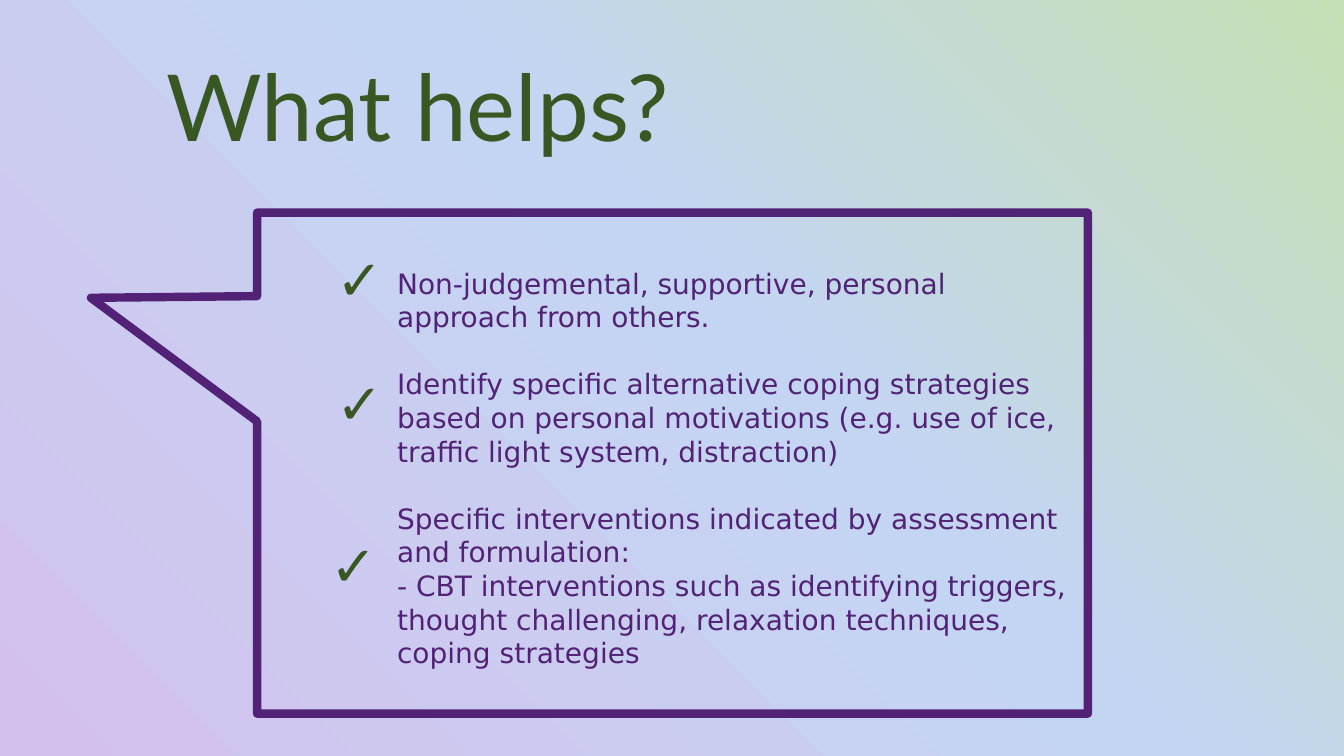
from lxml.etree import SubElement
from pptx import Presentation
from pptx.dml.color import RGBColor
from pptx.enum.shapes import MSO_SHAPE
from pptx.enum.text import MSO_ANCHOR, PP_ALIGN
from pptx.oxml import parse_xml
from pptx.oxml.ns import nsdecls, qn
from pptx.util import Inches, Pt

COLORS = {"lilac": "D3C1ED", "sky": "C4D5F3", "lime": "C5E0B4",
          "purple": "512275", "green": "385723"}
STOPS = [(0, "lilac"), (56, "sky"), (100, "lime")]
TITLE = {"size": Pt(66), "name": "Lato"}
BODY = {"size": Pt(20), "name": "DejaVu Sans"}
TICK = {"size": Pt(40), "name": "Calibri"}

# Each point is a list of paragraphs; a gap comes before every later point
POINTS = [
    ["Non-judgemental, supportive, personal approach from others."],
    ["Identify specific alternative coping strategies based on personal "
     "motivations (e.g. use of ice, traffic light system, distraction)"],
    ["Specific interventions indicated by assessment and formulation:",
     "- CBT interventions such as identifying triggers, thought challenging, "
     "relaxation techniques, coping strategies"],
]
TICKS = [(0.69, 0.27), (0.69, 1.5), (0.63, 3.1)]  # offsets in the callout


def color(name):
    return RGBColor.from_string(COLORS[name])


def style(para, text, form, tone):
    run = para.add_run()
    run.text = text
    for key, value in form.items():
        setattr(run.font, key, value)
    run.font.color.rgb = color(tone)


def frame(slide, x, y, w, h):
    box = slide.shapes.add_textbox(Inches(x), Inches(y), Inches(w), Inches(h))
    box.text_frame.word_wrap = True
    return box.text_frame


def backdrop(slide, x, y, w, h):
    """Radial wash spreading from the bottom left corner."""
    rect = slide.shapes.add_shape(MSO_SHAPE.RECTANGLE, Inches(x), Inches(y),
                                  Inches(w), Inches(h))
    rect.shadow.inherit = False
    rect.line.fill.background()
    grad = parse_xml(f'<a:gradFill {nsdecls("a")} rotWithShape="1"/>')
    stops = SubElement(grad, qn("a:gsLst"))
    for pos, tone in STOPS:
        stop = SubElement(stops, qn("a:gs"), pos=str(pos * 1000))
        SubElement(stop, qn("a:srgbClr"), val=COLORS[tone])
    ring = SubElement(grad, qn("a:path"), path="circle")
    SubElement(ring, qn("a:fillToRect"), t="100000", r="100000")
    rect._element.spPr.find(qn("a:prstGeom")).addnext(grad)
    slide.shapes._spTree.insert(2, rect._element)  # behind the title


def heading(slide, x, y, w, h):
    title = slide.shapes.title
    place = {"left": x, "top": y, "width": w, "height": h}
    for key, value in place.items():
        setattr(title, key, Inches(value))
    text = title.text_frame
    form = {"word_wrap": True, "vertical_anchor": MSO_ANCHOR.TOP}
    form.update({f"margin_{side}": Inches(0.1)
                 for side in ("left", "top", "right", "bottom")})
    for key, value in form.items():
        setattr(text, key, value)
    para = text.paragraphs[0]
    para.alignment = PP_ALIGN.LEFT
    para.line_spacing = 0.9
    style(para, "What helps?", TITLE, "green")


def callout(slide, x, y, w, h):
    """Speech box with its ticked points."""
    bubble = slide.shapes.add_shape(MSO_SHAPE.RECTANGULAR_CALLOUT, Inches(x),
                                    Inches(y), Inches(w), Inches(h))
    bubble.shadow.inherit = False
    bubble.fill.background()
    bubble.line.color.rgb = color("purple")
    bubble.line.width = Pt(6)
    bubble.adjustments[0] = -0.7
    bubble.adjustments[1] = -0.33

    # Points
    text = frame(slide, x + 1.29, y + 0.48, w - 1.3, h - 0.83)
    for i, point in enumerate(POINTS):
        for j, line in enumerate(point):
            first = i == j == 0
            para = text.paragraphs[0] if first else text.add_paragraph()
            para.space_before = Pt(24 if i and not j else 0)
            style(para, line, BODY, "purple")

    # Ticks
    for dx, dy in TICKS:
        mark = frame(slide, x + dx, y + dy, 0.73, 0.77)
        style(mark.paragraphs[0], "✓", TICK, "green")


def main():
    deck = Presentation()
    deck.slide_width, deck.slide_height = Inches(13.33), Inches(7.5)
    slide = deck.slides.add_slide(deck.slide_layouts[5])
    backdrop(slide, 0, 0, 13.33, 7.5)
    heading(slide, 1.55, 0.51, 7.9, 1.23)
    callout(slide, 2.55, 2.11, 8.24, 4.97)
    deck.save("out.pptx")


if __name__ == "__main__":
    main()
